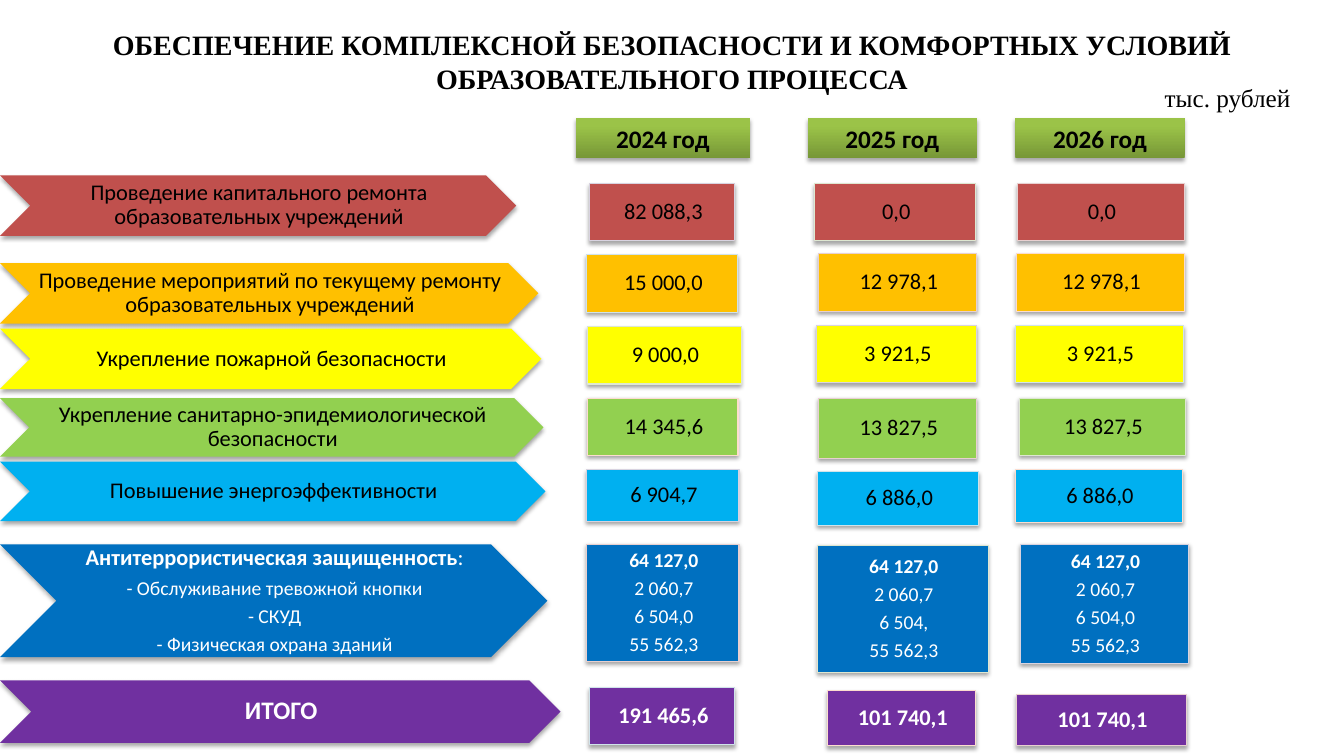
import itertools

import pptx
import pptx.dml.color
import pptx.enum.shapes
import pptx.enum.text
import pptx.oxml
import pptx.oxml.ns
import pptx.util

Inches = pptx.util.Inches
Pt = pptx.util.Pt
SHAPES = pptx.enum.shapes.MSO_SHAPE
ANCHOR = pptx.enum.text.MSO_ANCHOR
rgb = pptx.dml.color.RGBColor.from_string

SHADOW = (
    '<a:outerShdw %s blurRad="39370" dist="22860" dir="5400000" rotWithShape="0">'
    '<a:srgbClr val="000000"><a:alpha val="35000"/></a:srgbClr></a:outerShdw>'
    % pptx.oxml.ns.nsdecls("a")
)

deck = pptx.Presentation()
deck.slide_width = Inches(13.33)
deck.slide_height = Inches(7.5)
page = deck.slides.add_slide(deck.slide_layouts[6])


def write(box, paragraphs, color="000000", font="Calibri", anchor=ANCHOR.MIDDLE,
          insets=(0.02, 0.01, 0, 0.01), tight=True):
    """Fill box with centred paragraphs, each a list of (text, size, bold) spans."""
    frame = box.text_frame
    frame.word_wrap = True
    frame.vertical_anchor = anchor
    frame.margin_left, frame.margin_top, frame.margin_right, frame.margin_bottom = map(
        Inches, insets)
    for number, spans in enumerate(paragraphs):
        para = frame.add_paragraph() if number else frame.paragraphs[0]
        para.alignment = pptx.enum.text.PP_ALIGN.CENTER
        if tight:
            para.line_spacing = 0.9
            para.space_after = Pt(round(0.35 * spans[0][1], 1))
        for text, size, bold in spans:
            span = para.add_run()
            span.text = text
            span.font.name = font
            span.font.size = Pt(size)
            span.font.bold = bold
            span.font.color.rgb = rgb(color)


def add_block(kind, place, fill=None, line=None):
    """Add a shape with a soft shadow; without a fill colour it gets the green gradient."""
    block = page.shapes.add_shape(kind, *map(Inches, place))
    if fill:
        block.fill.solid()
        block.fill.fore_color.rgb = rgb(fill)
    else:
        block.fill.gradient()
        block.fill.gradient_angle = 90
        for stop, (color, position) in zip(block.fill.gradient_stops,
                                           [("779737", 0), ("9BC348", 0.8)]):
            stop.color.rgb = rgb(color)
            stop.position = position
    if line:
        block.line.color.rgb = rgb(line)
        block.line.width = Pt(0.75)
    else:
        block.line.fill.background()
    block.shadow.inherit = False
    effects = block._element.spPr.find(pptx.oxml.ns.qn("a:effectLst"))
    effects.append(pptx.oxml.parse_xml(SHADOW))
    return block


plain = {"insets": (0.09, 0.05, 0.09, 0.05), "tight": False}

title = page.shapes.add_textbox(Inches(0), Inches(0.14), Inches(13.33), Inches(0.85))
write(title, [[("ОБЕСПЕЧЕНИЕ КОМПЛЕКСНОЙ БЕЗОПАСНОСТИ И КОМФОРТНЫХ УСЛОВИЙ "
                "ОБРАЗОВАТЕЛЬНОГО ПРОЦЕССА", 20, True)]],
      font="Times New Roman", anchor=ANCHOR.BOTTOM, **plain)

units = page.shapes.add_textbox(Inches(11.2), Inches(0.77), Inches(1.95), Inches(0.4))
write(units, [[("тыс. рублей", 18, False)]],
      font="Times New Roman", anchor=ANCHOR.TOP, **plain)

for year, left, width in [(2024, 5.71, 1.73), (2025, 8.01, 1.68), (2026, 10.07, 1.68)]:
    header = add_block(SHAPES.RECTANGLE, (left, 1.17, width, 0.4))
    write(header, [[(f"{year} год", 18, True)]], anchor=ANCHOR.TOP, **plain)

security_label = [
    [("Антитеррористическая защищенность", 16, True), (":", 16, False)],
    [("- Обслуживание тревожной кнопки", 14, False)],
    [("- СКУД", 14, False)],
    [("- Физическая охрана зданий", 14, False)],
]

# Fill, text colour, bold, (arrow top, width, height), label, amounts with their places
rows = [
    ("C0504D", "000000", False, (1.74, 5.12, 0.6),
     [[("Проведение капитального ремонта образовательных учреждений", 16, False)]],
     [("0,0", (10.09, 1.82, 1.66, 0.57)),
      ("0,0", (8.08, 1.82, 1.6, 0.57)),
      ("82 088,3", (5.85, 1.82, 1.44, 0.57))]),
    ("FFC000", "000000", False, (2.61, 5.34, 0.6),
     [[("Проведение мероприятий по текущему ремонту образовательных учреждений", 16, False)]],
     [("15 000,0", (5.82, 2.53, 1.5, 0.57)),
      ("12 978,1", (10.08, 2.52, 1.67, 0.57)),
      ("12 978,1", (8.12, 2.52, 1.57, 0.57))]),
    ("FFFF00", "000000", False, (3.26, 5.37, 0.6),
     [[("Укрепление пожарной безопасности", 16, False)]],
     [("9 000,0", (5.83, 3.24, 1.52, 0.57)),
      ("3 921,5", (8.1, 3.23, 1.59, 0.57)),
      ("3 921,5", (10.07, 3.23, 1.67, 0.57))]),
    ("92D050", "000000", False, (3.95, 5.39, 0.58),
     [[("Укрепление санитарно-эпидемиологической безопасности", 16, False)]],
     [("14 345,6", (5.83, 3.95, 1.49, 0.57)),
      ("13 827,5", (8.12, 3.95, 1.57, 0.6)),
      ("13 827,5", (10.11, 3.95, 1.65, 0.57))]),
    ("00B0F0", "000000", False, (4.58, 5.41, 0.59),
     [[("Повышение энергоэффективности", 16, False)]],
     [("6 904,7", (5.82, 4.66, 1.51, 0.51)),
      ("6 886,0", (8.11, 4.68, 1.6, 0.53)),
      ("6 886,0", (10.07, 4.66, 1.66, 0.52))]),
    ("0070C0", "FFFFFF", True, (5.4, 5.43, 1.12), security_label,
     [("64 127,0|2 060,7|6 504,0|55 562,3", (5.82, 5.4, 1.51, 1.16)),
      ("64 127,0|2 060,7|6 504,|55 562,3", (8.11, 5.41, 1.69, 1.26)),
      ("64 127,0|2 060,7|6 504,0|55 562,3", (10.12, 5.4, 1.67, 1.18))]),
    ("7030A0", "FFFFFF", True, (6.75, 5.56, 0.62), [[("ИТОГО", 18, True)]],
     [("191 465,6", (5.85, 6.82, 1.44, 0.57)),
      ("101 740,1", (8.21, 6.85, 1.47, 0.55)),
      ("101 740,1", (10.08, 6.89, 1.69, 0.51))]),
]

borders = itertools.cycle(["E8D0D0", "DEE7D1", "D8D3E0", "D0E3EA", "FCDDCF"])
for fill, color, bold, (top, width, height), label, amounts in rows:
    arrow = add_block(SHAPES.CHEVRON, (0, top, width, height), fill)
    write(arrow, label, color)
    for amount, place in amounts:
        cell = add_block(SHAPES.RECTANGLE, place, fill, next(borders))
        figures = amount.split("|")
        size = 14 if len(figures) > 1 else 16
        write(cell, [[(figure, size, bold and number == 0)]
                     for number, figure in enumerate(figures)], color)

deck.save("out.pptx")
